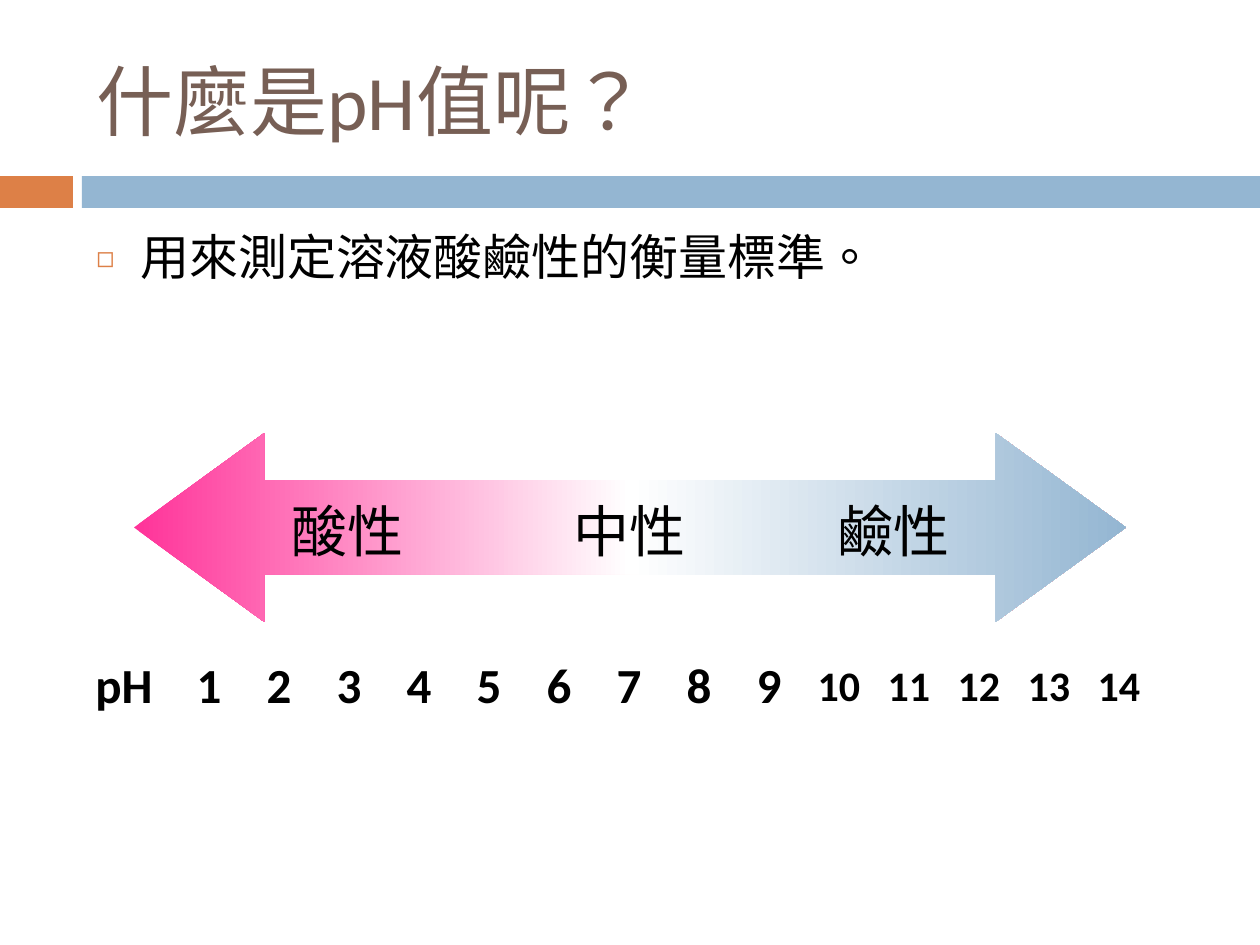
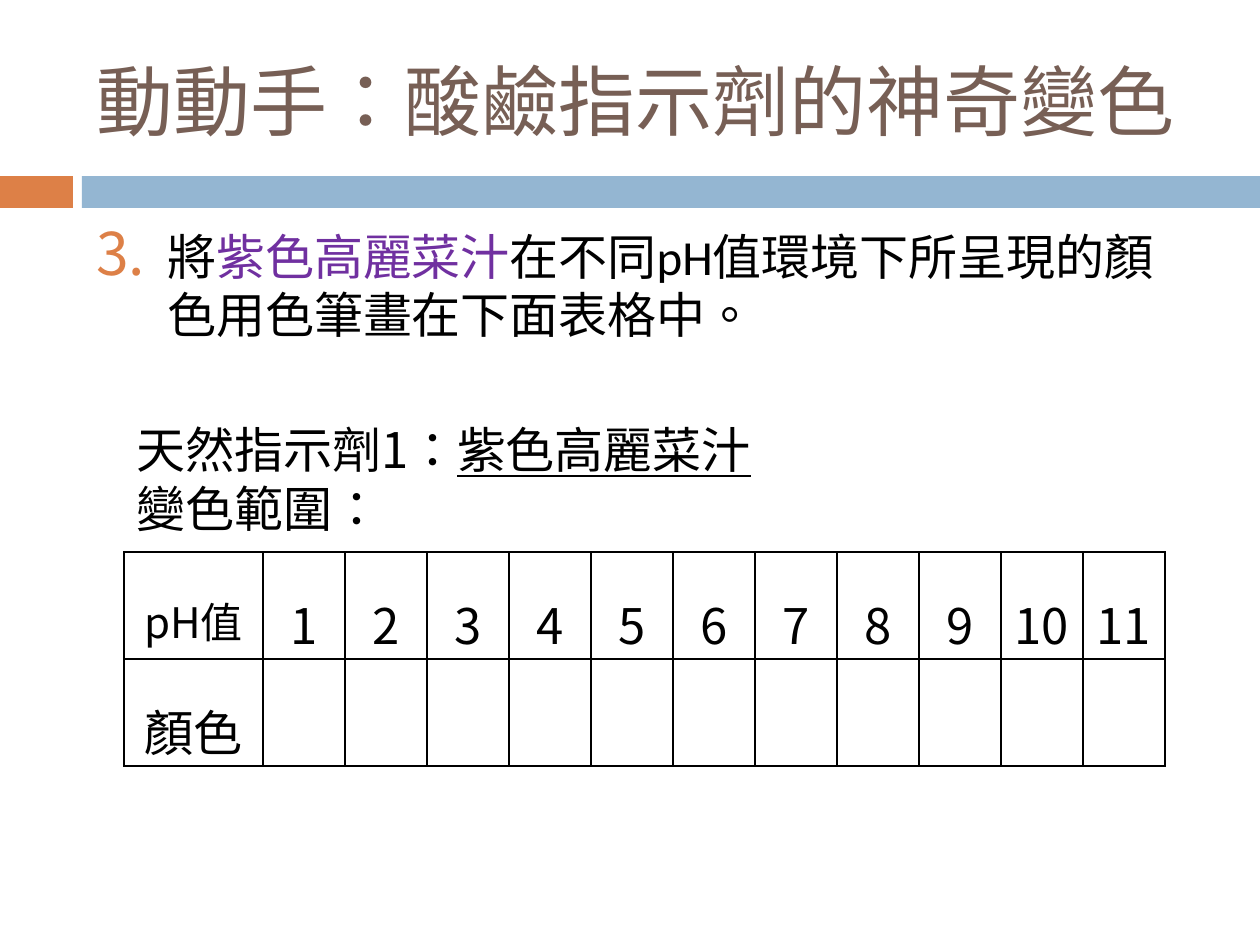
from pptx import Presentation
from pptx import util as u
from pptx.dml.color import RGBColor
from pptx.enum import shapes, text
from pptx.oxml.ns import qn
from pptx.oxml.xmlchemy import OxmlElement

PX = 914400 / 126  # EMU in one px
COLORS = {
    "title": "775F55", "text": "000000", "accent": "DD8047", "band": "94B6D2",
    "purple": "7030A0", "acid": "FF3399", "neutral": "FFFFFF",
}
LATIN, CJK = "Calibri", "Noto Sans CJK SC"
CENTER = text.PP_ALIGN.CENTER
MIDDLE = text.MSO_ANCHOR.MIDDLE


def px(n):
    return u.Emu(round(n * PX))


def rgb(name):
    return RGBColor.from_string(COLORS[name])


def node(parent, tag, **attrs):
    el = OxmlElement(tag)
    for key, value in attrs.items():
        el.set(key, str(value))
    parent.append(el)
    return el


class Deck:
    def __init__(self):
        self.prs = Presentation()
        self.prs.slide_width, self.prs.slide_height = px(1260), px(945)
        self.s = None

    def slide(self, title):
        """New slide with the shared title and bands."""
        self.s = self.prs.slides.add_slide(self.prs.slide_layouts[6])
        self.shape("RECTANGLE", 0, 176, 73, 32, "accent")
        self.shape("RECTANGLE", 82, 176, 1178, 32, "band")
        tf = self.box(84, 32, 1124, 136, anchor=MIDDLE)
        self.run(tf.paragraphs[0], title, 44, "title")

    def shape(self, kind, x, y, w, h, color):
        sp = self.s.shapes.add_shape(
            shapes.MSO_SHAPE[kind], px(x), px(y), px(w), px(h))
        sp.shadow.inherit = False
        sp.line.fill.background()
        sp.fill.solid()
        sp.fill.fore_color.rgb = rgb(color)
        return sp

    def gradient_arrow(self, x, y, w, h, stops):
        sp = self.shape("LEFT_RIGHT_ARROW", x, y, w, h, "band")
        sp.adjustments[0], sp.adjustments[1] = 0.5, 0.69
        sp.fill.gradient()
        sp.fill.gradient_angle = 0
        gs_list = sp._element.spPr.find(qn("a:gradFill")).find(qn("a:gsLst"))
        gs_list.clear()
        for i, name in enumerate(stops):
            gs = node(gs_list, "a:gs", pos=100000 * i // (len(stops) - 1))
            node(gs, "a:srgbClr", val=COLORS[name])

    def box(self, x, y, w, h, anchor=text.MSO_ANCHOR.TOP, wrap=True):
        tf = self.s.shapes.add_textbox(px(x), px(y), px(w), px(h)).text_frame
        tf.word_wrap = wrap
        tf.vertical_anchor = anchor
        return tf

    def run(self, p, words, size, color="text", font=LATIN, **style):
        r = p.add_run()
        r.text = words
        r.font.size, r.font.name = u.Pt(size), font
        r.font.color.rgb = rgb(color)
        for key, value in style.items():
            setattr(r.font, key, value)
        rPr = r._r.get_or_add_rPr()
        rPr.set("lang", "zh-TW")
        node(rPr, "a:ea", typeface=CJK)

    def body(self, runs, indent, bullet_size, bullet, **bullet_attrs):
        """Body paragraph with a coloured hanging bullet or number."""
        p = self.box(84, 220, 1124, 620).paragraphs[0]
        p.space_before = u.Pt(7)
        pPr = p._p.get_or_add_pPr()
        pPr.set("marL", str(px(indent)))
        pPr.set("indent", str(-px(indent)))
        node(node(pPr, "a:buClr"), "a:srgbClr", val=COLORS["accent"])
        node(pPr, "a:buSzPct", val=bullet_size * 1000)
        node(pPr, "a:buFont", typeface=CJK)
        node(pPr, bullet, **bullet_attrs)
        for words, color in runs:
            self.run(p, words, 28, color)

    def table(self, x, y, widths, row_h, n_rows):
        tbl = self.s.shapes.add_table(
            n_rows, len(widths), px(x), px(y), px(sum(widths)), px(row_h * n_rows)).table
        tbl.first_row = tbl.horz_banding = False
        for col, w in zip(tbl.columns, widths):
            col.width = px(w)
        for cell in tbl.iter_cells():
            cell.vertical_anchor = MIDDLE
            cell.text_frame.paragraphs[0].alignment = CENTER
            cell.fill.background()
        return tbl

    def grid(self, tbl):
        """Thin black borders, tight margins and wide line spacing."""
        for cell in tbl.iter_cells():
            cell.margin_left = cell.margin_right = px(9)
            cell.margin_top = cell.margin_bottom = 0
            cell.text_frame.paragraphs[0].line_spacing = 1.5
            tcPr = cell._tc.get_or_add_tcPr()
            for i, side in enumerate(("lnL", "lnR", "lnT", "lnB")):
                ln = node(tcPr, "a:" + side, w=u.Pt(1))
                node(node(ln, "a:solidFill"), "a:srgbClr", val=COLORS["text"])
                tcPr.insert(i, ln)


def ph_scale(d):
    d.slide("什麼是pH值呢？")
    d.body([("用來測定溶液酸鹼性的衡量標準。", "text")], 44, 60, "a:buChar", char="◻")

    # pH numbers
    tbl = d.table(74, 651, [100] + [70] * 14, 72, 1)
    for i, cell in enumerate(tbl.iter_cells()):
        d.run(cell.text_frame.paragraphs[0], str(i) if i else "pH",
              24 if i >= 10 else 28, bold=True)

    # Acid to alkali arrow
    d.gradient_arrow(134, 433, 992, 189, ["acid", "neutral", "band"])
    for label, x in (("酸性", 279), ("中性", 561), ("鹼性", 825)):
        p = d.box(x, 490, 138, 80, wrap=False).paragraphs[0]
        p.alignment = CENTER
        d.run(p, label, 32)


def indicator_record(d):
    d.slide("動動手：酸鹼指示劑的神奇變色")
    d.body([("將", "text"), ("紫色高麗菜汁", "purple"),
            ("在不同pH值環境下所呈現的顏色用色筆畫在下面表格中。", "text")],
           71, 120, "a:buAutoNum", type="arabicPeriod", startAt=3)

    # Record table, rows tall enough for the wide line spacing
    tbl = d.table(124, 552, [139] + [82] * 11, 107, 2)
    d.grid(tbl)
    head = tbl.cell(0, 0).text_frame.paragraphs[0]
    d.run(head, "pH", 24, font=CJK)
    d.run(head, "值", 24)
    for i in range(1, 12):
        d.run(tbl.cell(0, i).text_frame.paragraphs[0], str(i), 28, font=CJK)
    d.run(tbl.cell(1, 0).text_frame.paragraphs[0], "顏色", 28)

    # Indicator name and range
    tf = d.box(124, 413, 745, 131, anchor=MIDDLE)
    p = tf.paragraphs[0]
    d.run(p, "天然指示劑1：", 28, font=CJK)
    d.run(p, "紫色高麗菜汁", 28, font=CJK, underline=True)
    d.run(tf.add_paragraph(), "變色範圍：", 28, font=CJK)


def main():
    d = Deck()
    ph_scale(d)
    indicator_record(d)
    d.prs.save("out.pptx")


if __name__ == "__main__":
    main()
